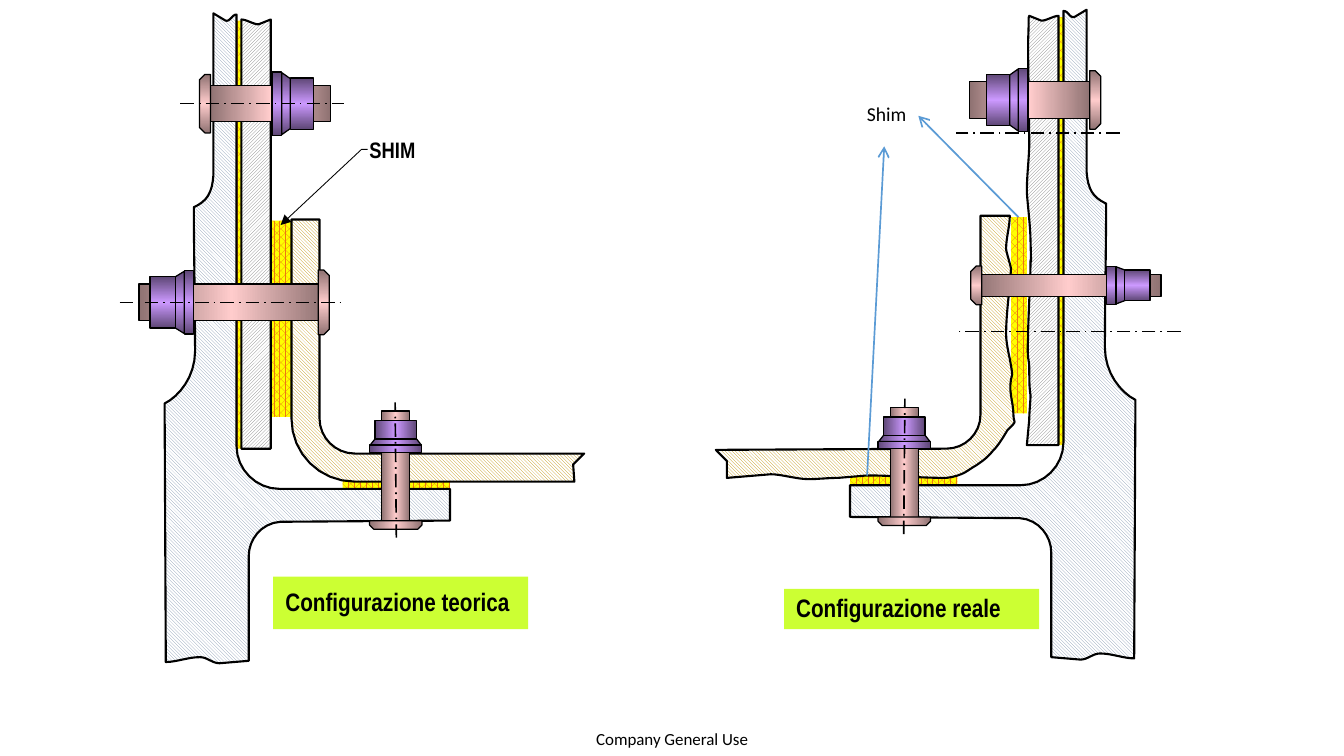
from copy import deepcopy
from dataclasses import dataclass

from lxml import etree
from pptx import Presentation, util as u
from pptx.dml.color import RGBColor
from pptx.enum import dml, shapes, text
from pptx.oxml.ns import qn

KIND = shapes.MSO_SHAPE
HATCH = dml.MSO_PATTERN


@dataclass(frozen=True)
class Theme:
    black: str = "000000"
    lime: str = "CCFF33"
    blue: str = "5B9BD5"
    steel: tuple = ("8F7272", "FFCCCC")
    violet: tuple = ("5E4776", "CC99FF")
    shim: tuple = (HATCH.PERCENT_70, "EE7713", "FFFF00")
    angle: tuple = (HATCH.DARK_DOWNWARD_DIAGONAL, "BF9000", "FFFFFF")
    frame: tuple = (HATCH.DARK_DOWNWARD_DIAGONAL, "8497B0", "FFFFFF")
    plate: tuple = (HATCH.DARK_UPWARD_DIAGONAL, "7C7C7C", "FFFFFF")
    label: str = "Arial Narrow"
    plain: str = "Calibri"
    title: float = 14.9
    call: float = 13.2
    note: float = 11.6
    foot: float = 10
    bold_line: float = 1.25
    thin_line: float = 0.75


T = Theme()


@dataclass
class View:
    """One half of the drawing; a turned view mirrors what it is given."""
    slide: object
    turned: bool = False

    def spot(self, x, y):
        return (10.66 - x, y - 0.03) if self.turned else (x, y)

    def box(self, left, top, right, low):
        (x1, y1), (x2, y2) = self.spot(left, top), self.spot(right, low)
        return min(x1, x2), y1, abs(x2 - x1), y2 - y1


@dataclass
class Bolt:
    """Parts along the axis as (from, to), each with its half width."""
    mid: float
    shank: tuple
    head: tuple
    washer: tuple
    cone: tuple
    collar: tuple
    turn: int

    @property
    def upright(self):
        return self.turn == 180


TOP = Bolt(0.85, (1.72, 2.71, 0.15), (1.635, 1.725, 0.24), (2.23, 2.31, 0.26),
           (2.31, 2.38, 0.255, 0.205), (2.38, 2.57, 0.21), 270)
SIDE = Bolt(2.48, (1.14, 2.66, 0.15), (2.61, 2.7, 0.265), (1.51, 1.59, 0.26),
            (1.51, 1.43, 0.255, 0.205), (1.23, 1.44, 0.21), 90)
FOOT = Bolt(3.245, (3.37, 4.3, 0.115), (4.27, 4.34, 0.215), (3.65, 3.71, 0.215),
            (3.65, 3.6, 0.21, 0.17), (3.45, 3.6, 0.17), 180)

# A pair is a straight step; six numbers are a curve with two control points.
FRAME = [(1.59, 1.7), (1.59, 2.02, 1.6, 2.55, 1.6, 2.88),
         (1.6, 3.09, 1.47, 3.25, 1.35, 3.31), (1.36, 5.43),
         (1.45, 5.43, 1.54, 5.39, 1.64, 5.39), (1.7, 5.39, 1.74, 5.44, 1.8, 5.44),
         (2.04, 5.42), (2.04, 4.56), (2.04, 4.43, 2.14, 4.29, 2.3, 4.28),
         (3.69, 4.27), (3.69, 4.01), (2.29, 4.01),
         (2.1, 4.01, 1.94, 3.85, 1.94, 3.66), (1.94, 0.12),
         (1.9, 0.12, 1.89, 0.18, 1.85, 0.17), (1.75, 0.11), (1.75, 1.44),
         (1.74, 1.58, 1.7, 1.65, 1.59, 1.7)]
ANGLE = [(2.39, 1.8), (2.39, 3.43), (2.39, 3.72, 2.62, 3.95, 2.91, 3.95),
         (4.71, 3.95), (4.7, 3.81), (4.79, 3.72), (2.91, 3.72),
         (2.75, 3.72, 2.62, 3.59, 2.62, 3.43), (2.62, 1.8)]
PLATE = [(1.98, 0.16), (2.02, 0.16, 2.08, 0.2, 2.12, 0.2), (2.22, 0.16),
         (2.22, 3.68), (1.98, 3.68)]
REAL_ANGLE = [(8.28, 1.77), (8.28, 1.86, 8.25, 1.95, 8.25, 2.04),
              (8.25, 2.07, 8.29, 2.18, 8.29, 2.21),
              (8.28, 2.38, 8.25, 2.57, 8.25, 2.74),
              (8.25, 2.84, 8.29, 2.96, 8.3, 3.07),
              (8.26, 3.2, 8.31, 3.29, 8.31, 3.4),
              (8.31, 3.48, 8.35, 3.44, 8.26, 3.53),
              (8.23, 3.58, 8.19, 3.65, 8.14, 3.7),
              (8.1, 3.75, 8.06, 3.78, 8, 3.82),
              (7.94, 3.85, 7.91, 3.9, 7.76, 3.92),
              (7.54, 3.92, 7.33, 3.9, 7.11, 3.9), (6.87, 3.92),
              (6.79, 3.92, 6.71, 3.93, 6.63, 3.93),
              (6.53, 3.93, 6.41, 3.89, 6.32, 3.89), (5.96, 3.92), (5.96, 3.78),
              (5.87, 3.69), (7.76, 3.68), (7.91, 3.68, 8.04, 3.56, 8.04, 3.4),
              (8.04, 1.77)]
REAL_PLATE = [(8.68, 0.13), (8.64, 0.13, 8.58, 0.17, 8.54, 0.17), (8.44, 0.13),
              (8.43, 0.16, 8.44, 0.11, 8.43, 0.35),
              (8.43, 0.53, 8.44, 0.99, 8.44, 1.2),
              (8.43, 1.4, 8.42, 1.45, 8.42, 1.58),
              (8.43, 1.71, 8.45, 1.87, 8.45, 1.97),
              (8.46, 2.3, 8.45, 2.04, 8.45, 2.17),
              (8.45, 2.3, 8.43, 2.62, 8.43, 2.77),
              (8.42, 2.96, 8.44, 2.94, 8.44, 3.02),
              (8.44, 3.1, 8.44, 3.18, 8.45, 3.24),
              (8.45, 3.29, 8.44, 3.38, 8.44, 3.44), (8.42, 3.65), (8.68, 3.65)]


def size(*inches):
    return [u.Cm(2.54 * v) for v in inches]


def tint(color, code):
    color.rgb = RGBColor.from_string(code)


def paint(shape, fill=None, width=0, angle=0):
    """Fill with a colour, an (edge, middle) gradient or a hatch."""
    shape.shadow.inherit = False
    if fill is None:
        shape.fill.background()
    elif isinstance(fill, str):
        shape.fill.solid()
        tint(shape.fill.fore_color, fill)
    elif len(fill) == 3:
        shape.fill.patterned()
        shape.fill.pattern = fill[0]
        tint(shape.fill.fore_color, fill[1])
        tint(shape.fill.back_color, fill[2])
    else:
        shape.fill.gradient()
        stops = shape._element.spPr.find(".//" + qn("a:gsLst"))
        stops.insert(1, deepcopy(stops[0]))
        edge, core = fill
        for stop, place, code in zip(shape.fill.gradient_stops, (0, 0.5, 1), (edge, core, edge)):
            stop.position = place
            tint(stop.color, code)
        shape.fill.gradient_angle = angle
    if width:
        tint(shape.line.color, T.black)
        shape.line.width = u.Pt(width)
    else:
        shape.line.fill.background()


def outline(view, steps, fill, width=T.bold_line, angle=0):
    points = [steps[0]]
    for step in steps[1:]:
        if len(step) == 2:
            points.append(step)
            continue
        ends = [points[-1], step[:2], step[2:4], step[4:]]
        for t in (n / 8 for n in range(1, 9)):
            parts = ((1 - t) ** 3, 3 * t * (1 - t) ** 2, 3 * t * t * (1 - t), t ** 3)
            points.append(tuple(sum(w * p[i] for w, p in zip(parts, ends)) for i in (0, 1)))
    first, *rest = [size(*view.spot(*p)) for p in points]
    maker = view.slide.shapes.build_freeform(*first, scale=1.0)
    maker.add_line_segments(rest, close=True)
    paint(maker.convert_to_shape(), fill, width, angle)


def block(view, sides, fill, width=0, angle=0):
    shape = view.slide.shapes.add_shape(KIND.RECTANGLE, *size(*view.box(*sides)))
    paint(shape, fill, width, angle)


def head(view, sides, turn):
    x, y, w, h = view.box(*sides)
    if turn != 180:
        x, y, w, h = x + (w - h) / 2, y + (h - w) / 2, h, w
    shape = view.slide.shapes.add_shape(KIND.SNIP_2_SAME_RECTANGLE, *size(x, y, w, h))
    shape.adjustments[0], shape.adjustments[1] = 0.5, 0
    shape.rotation = 360 - turn if view.turned else turn
    paint(shape, T.steel, T.thin_line)


def fasten(view, bolt, mid=None, scale=1):
    mid = mid or bolt.mid
    across = 0 if bolt.upright else 90

    def turn(along, off):
        return (mid + off, along) if bolt.upright else (along, mid + off)

    def sides(part):
        start, end, half = part
        return *turn(start, -half * scale), *turn(end, half * scale)

    block(view, sides(bolt.shank), T.steel, T.thin_line)
    head(view, sides(bolt.head), bolt.turn)
    start, end, wide, slim = bolt.cone
    wide, slim = wide * scale, slim * scale
    cone = [turn(start, wide), turn(end, slim), turn(end, -slim), turn(start, -wide)]
    outline(view, cone, T.violet, T.thin_line, across)
    for part in (bolt.collar, bolt.washer):
        block(view, sides(part), T.violet, T.thin_line, across)


def tip(shape, kind):
    line = shape._element.spPr.find(qn("a:ln"))
    etree.SubElement(line, qn("a:tailEnd"), type=kind)


def stroke(view, start, end, code=T.black, arrow=False):
    """Draw an arrow, or a dash-dot centre line."""
    ends = size(*view.spot(*start), *view.spot(*end))
    line = view.slide.shapes.add_connector(shapes.MSO_CONNECTOR.STRAIGHT, *ends)
    tint(line.line.color, code)
    line.line.width = u.Pt(1)
    if arrow:
        tip(line, "arrow")
    else:
        line.line.dash_style = dml.MSO_LINE.LONG_DASH_DOT
    etree.SubElement(line._element.spPr, qn("a:effectLst"))


def write(shape, words, font, points, bold=False, center=False, pad=(0.1, 0.05),
          middle=True, space=1.0, wrap=True):
    frame = shape.text_frame
    frame.word_wrap = wrap
    frame.auto_size = text.MSO_AUTO_SIZE.NONE
    frame.margin_left = frame.margin_right = size(pad[0])[0]
    frame.margin_top = frame.margin_bottom = size(pad[1])[0]
    frame.vertical_anchor = text.MSO_ANCHOR.MIDDLE if middle else text.MSO_ANCHOR.TOP
    para = frame.paragraphs[0]
    para.alignment = text.PP_ALIGN.CENTER if center else text.PP_ALIGN.LEFT
    para.line_spacing = space
    run = para.add_run()
    run.text = words
    run.font.name, run.font.size, run.font.bold = font, u.Pt(points), bold
    tint(run.font.color, T.black)


def banner(shape, words, place):
    shape.left, shape.top, shape.width, shape.height = size(*place)
    paint(shape, T.lime)
    write(shape, words, T.label, T.title, bold=True, space=0.9)


def joint(view, shim, angle, plate, drop=0, lower=SIDE.mid, scale=1):
    """Draw one joint; drop and lower shift its centre lines and side bolt."""
    fixed = View(view.slide)
    block(fixed, shim, T.shim)
    for sides in ((1.9, 0.17, 2.03, 3.68), (2.81, 3.9, 3.69, 4.08)):
        block(view, sides, T.shim)
    outline(fixed, angle, T.angle)
    outline(view, FRAME, T.frame)
    outline(fixed, plate, T.plate)
    fasten(view, FOOT)
    stroke(view, (3.25, 4.41), (3.24, 3.3))
    fasten(view, TOP)
    fasten(view, SIDE, lower, scale)
    for left, bolt in ((0.98, SIDE), (1.48, TOP)):
        stroke(view, (left, bolt.mid + drop), (2.82, bolt.mid + drop))


def callout(slide):
    shape = slide.shapes.add_shape(KIND.LINE_CALLOUT_2_NO_BORDER, *size(3.03, 1.11, 0.66, 0.28))
    for i, value in enumerate((0.412, -0.025, 0.412, -0.099, 2.629, -1.105)):
        shape.adjustments[i] = value
    paint(shape, None, 0.5)
    tip(shape, "triangle")
    write(shape, "SHIM", T.label, T.call, bold=True, pad=(0, 0.05), middle=False, space=0.8)


def main():
    deck = Presentation()
    deck.slide_width, deck.slide_height = size(11.02, 6.2)
    slide = deck.slides.add_slide(deck.slide_layouts[5])
    ideal, real = View(slide), View(slide, True)
    foot = slide.shapes.add_textbox(*size(4.72, 5.91, 1.58, 0.29))
    write(foot, "Company General Use", T.plain, T.foot, center=True, pad=(0, 0))
    banner(slide.shapes.title, "Configurazione teorica", (2.24, 4.73, 2.09, 0.43))
    joint(ideal, (2.1, 1.81, 2.39, 3.42), ANGLE, PLATE)
    callout(slide)
    joint(real, (8.29, 1.78, 8.42, 3.39), REAL_ANGLE, REAL_PLATE, 0.32 - 0.05, 2.37, 0.6)
    for start, end in (((8.35, 1.78), (7.53, 0.95)), ((7.11, 3.9), (7.25, 1.2))):
        stroke(ideal, start, end, T.blue, arrow=True)
    note = slide.shapes.add_textbox(*size(7.01, 0.79, 0.53, 0.3))
    write(note, "Shim", T.plain, T.note, middle=False, wrap=False)
    label = slide.shapes.add_shape(KIND.RECTANGLE, *size(6.43, 4.83, 2.09, 0.33))
    banner(label, "Configurazione reale", (6.43, 4.83, 2.09, 0.33))
    deck.save("out.pptx")


if __name__ == "__main__":
    main()
